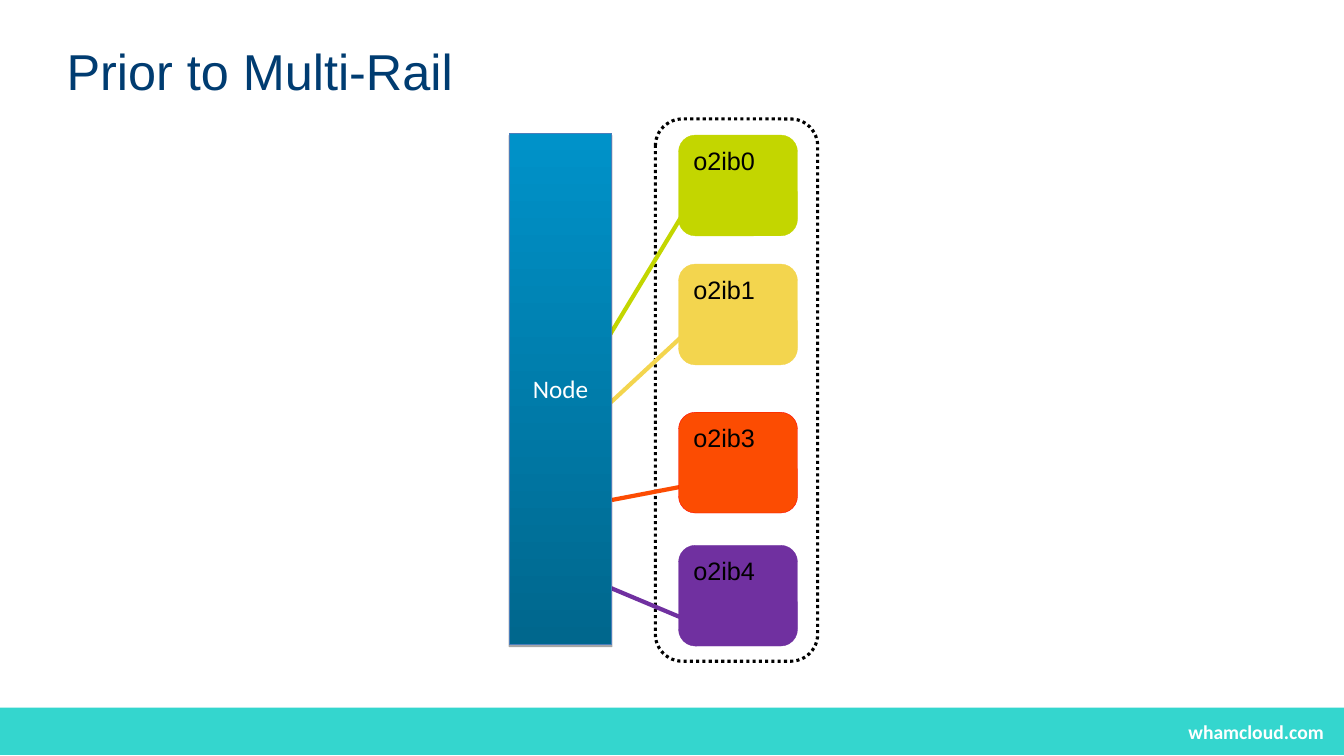
from lxml.etree import SubElement
from pptx import Presentation
from pptx.dml.color import RGBColor
from pptx.enum.dml import MSO_LINE
from pptx.enum.shapes import MSO_CONNECTOR, MSO_SHAPE
from pptx.enum.text import MSO_ANCHOR, MSO_AUTO_SIZE, PP_ALIGN
from pptx.oxml import parse_xml
from pptx.oxml.ns import nsdecls, qn
from pptx.util import Inches, Pt


def color(hex_string):
    return RGBColor.from_string(hex_string)


def write(part, text, size, font, hex_string, align, anchor):
    frame = part.text_frame
    frame.text = text
    frame.vertical_anchor = anchor
    paragraph = frame.paragraphs[0]
    paragraph.alignment = align
    paragraph.font.size = Pt(size)
    paragraph.font.name = font
    paragraph.font.color.rgb = color(hex_string)
    return frame


deck = Presentation()
deck.slide_width, deck.slide_height = Inches(13.33), Inches(7.5)
slide = deck.slides.add_slide(deck.slide_layouts[5])
shapes = slide.shapes

footer = shapes.add_shape(
    MSO_SHAPE.RECTANGLE, 0, Inches(7.02), deck.slide_width, Inches(0.47))
footer.shadow.inherit = False
footer.fill.solid()
footer.fill.fore_color.rgb = color("34D6CE")
footer.line.fill.background()

address = shapes.add_textbox(Inches(11.26), Inches(7.09), Inches(1.97), Inches(0.33))
write(address, "whamcloud.com", 14, "Calibri", "FFFFFF", PP_ALIGN.RIGHT, MSO_ANCHOR.TOP)
address.text_frame.word_wrap = False
address.text_frame.paragraphs[0].font.bold = True

title = shapes.title
title.left, title.top = Inches(0.66), Inches(0.38)
title.width, title.height = Inches(12), Inches(0.64)
heading = write(title, "Prior to Multi-Rail", 36, "Arial", "003C71",
                PP_ALIGN.LEFT, MSO_ANCHOR.MIDDLE)
heading.auto_size = MSO_AUTO_SIZE.NONE
heading.word_wrap = True
heading.margin_left = heading.margin_right = 0
heading.margin_top = heading.margin_bottom = 0

group_outline = shapes.add_shape(
    MSO_SHAPE.ROUNDED_RECTANGLE, Inches(6.5), Inches(1.18), Inches(1.61), Inches(5.38))
group_outline.shadow.inherit = False
group_outline.fill.background()
group_outline.line.color.rgb = color("000000")
group_outline.line.width = Pt(2.25)
group_outline.line.dash_style = MSO_LINE.ROUND_DOT

networks = [
    ("o2ib0", 1.34, "C3D600", "C3D600", (6.05, 3.32, 6.8, 2.08)),
    ("o2ib1", 2.62, "F3D54E", "F3D54E", (6.06, 3.99, 6.75, 3.35)),
    ("o2ib3", 4.09, "FC4C02", "FF0000", (6.75, 4.83, 6.07, 4.96)),
    ("o2ib4", 5.41, "7030A0", "7030A0", (6.74, 6.12, 6.05, 5.83)),
]

for name, top, fill, edge, ends in networks:
    link = shapes.add_connector(MSO_CONNECTOR.STRAIGHT, *map(Inches, ends))
    link.line.color.rgb = color(fill)
    link.line.width = Pt(3)
    SubElement(link.element.spPr, qn("a:effectLst"))

for name, top, fill, edge, ends in networks:
    network = shapes.add_shape(
        MSO_SHAPE.ROUNDED_RECTANGLE, Inches(6.73), Inches(top), Inches(1.18), Inches(1))
    network.shadow.inherit = False
    network.fill.solid()
    network.fill.fore_color.rgb = color(fill)
    network.line.color.rgb = color(edge)
    network.line.width = Pt(0.25)
    write(network, name, 18, "Arial", "000000", PP_ALIGN.LEFT, MSO_ANCHOR.TOP)

node = shapes.add_shape(
    MSO_SHAPE.RECTANGLE, Inches(5.05), Inches(1.32), Inches(1.02), Inches(5.07))
node.fill.gradient()
node.fill.gradient_angle = 90
for stop, shade in zip(node.fill.gradient_stops, ("00678D", "0092C9")):
    stop.color.rgb = color(shade)
node.line.color.rgb = color("4A7EBB")
node.line.width = Pt(0.75)
node.element.spPr.append(parse_xml(
    f'<a:effectLst {nsdecls("a")}>'
    f'<a:outerShdw blurRad="0" dist="{Pt(1.8)}" dir="5400000" rotWithShape="0">'
    '<a:srgbClr val="000000"><a:alpha val="35000"/></a:srgbClr>'
    '</a:outerShdw></a:effectLst>'))
write(node, "Node", 18, "Calibri", "FFFFFF", PP_ALIGN.CENTER, MSO_ANCHOR.MIDDLE)

deck.save("out.pptx")
